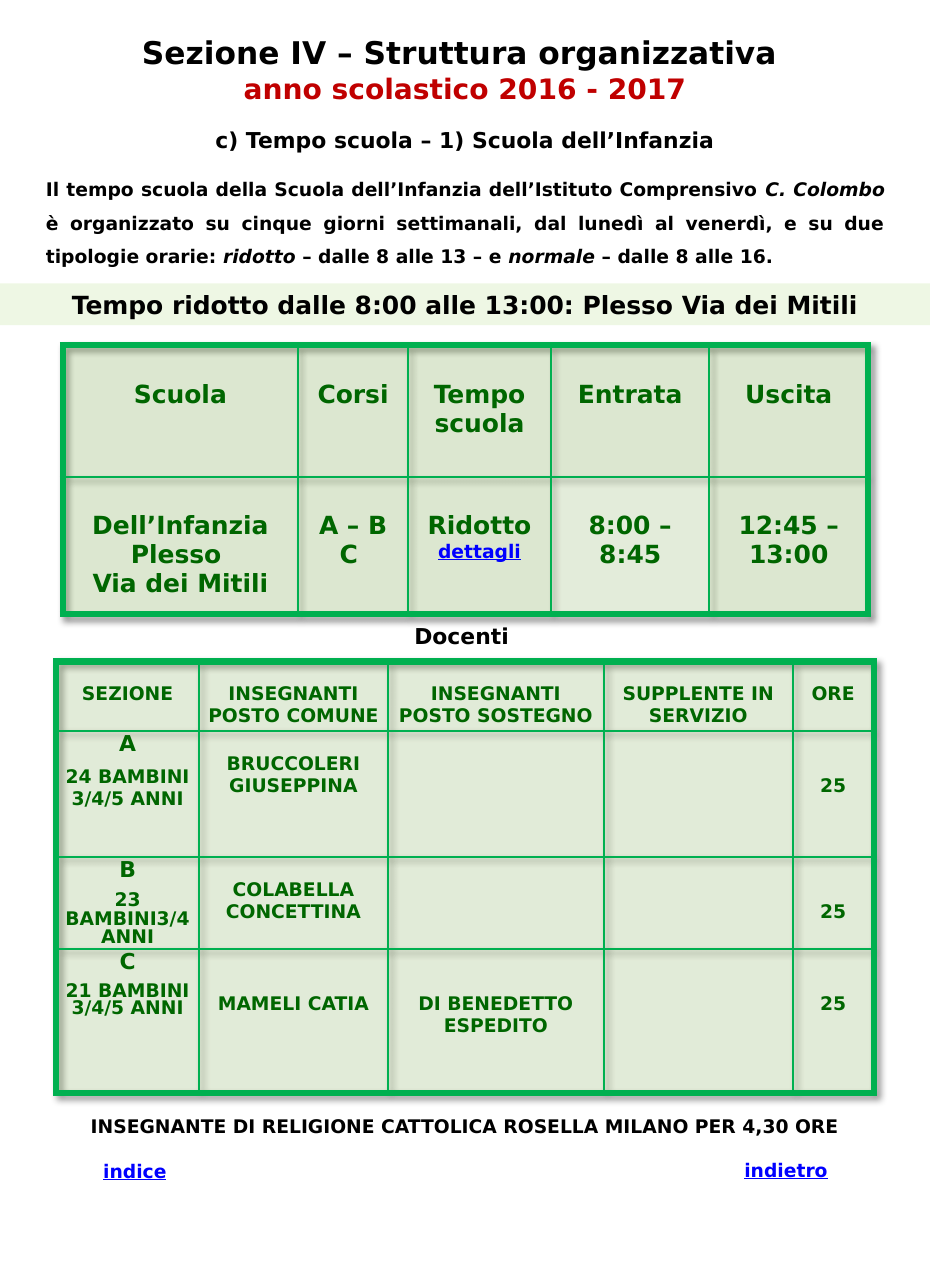
import pptx
import pptx.dml.color
import pptx.enum.shapes
import pptx.enum.text
import pptx.oxml
import pptx.oxml.ns
import pptx.util

FONT = "DejaVu Sans"
BLACK = pptx.dml.color.RGBColor(0x00, 0x00, 0x00)
RED = pptx.dml.color.RGBColor(0xC0, 0x00, 0x00)
BLUE = pptx.dml.color.RGBColor(0x00, 0x00, 0xFF)
DARK_GREEN = pptx.dml.color.RGBColor(0x00, 0x66, 0x00)
LINE_GREEN = pptx.dml.color.RGBColor(0x00, 0xB0, 0x50)
LIGHT_GREEN = pptx.dml.color.RGBColor(0x92, 0xD0, 0x50)
CENTER = pptx.enum.text.PP_ALIGN.CENTER
JUSTIFY = pptx.enum.text.PP_ALIGN.JUSTIFY
NAMESPACE = pptx.oxml.ns.nsdecls("a")
THIN, THICK = pptx.util.Pt(1.5), pptx.util.Pt(4.5)

presentation = pptx.Presentation()
presentation.slide_width = pptx.util.Inches(8.27)
presentation.slide_height = pptx.util.Inches(11.45)
COLUMN = presentation.slide_width // 827
ROW = presentation.slide_height // 1145
slide = presentation.slides.add_slide(presentation.slide_layouts[6])


def add_paragraph(frame, text, size, color=BLACK, before=0, spacing=None, align=CENTER):
    paragraph = frame.add_paragraph() if frame.text else frame.paragraphs[0]
    paragraph.alignment = align
    if before:
        paragraph.space_before = pptx.util.Pt(before)
    if spacing:
        paragraph.line_spacing = spacing
    for index, part in enumerate(text.split("|")):
        run = paragraph.add_run()
        run.text = part
        run.font.name = FONT
        run.font.size = pptx.util.Pt(size)
        run.font.bold = True
        run.font.italic = index % 2 == 1
        run.font.underline = color == BLUE
        run.font.color.rgb = color


def fill_translucent(fill, properties, percent):
    fill.solid()
    fill.fore_color.rgb = LIGHT_GREEN
    color = properties.find(pptx.oxml.ns.qn("a:solidFill"))[0]
    color.append(pptx.oxml.parse_xml(f'<a:alpha {NAMESPACE} val="{percent * 1000}"/>'))


introduction = (
    "Il tempo scuola della Scuola dell’Infanzia dell’Istituto Comprensivo |C. Colombo|"
    " è organizzato su cinque giorni settimanali, dal lunedì al venerdì, e su due"
    " tipologie orarie: |ridotto| – dalle 8 alle 13 – e |normale| – dalle 8 alle 16. "
)
text_boxes = [
    ((0, 25, 827, 118), [
        dict(text="Sezione IV – Struttura organizzativa ", size=20),
        dict(text="anno scolastico 2016 - 2017", size=18, color=RED),
        dict(text="c) Tempo scuola – 1) Scuola dell’Infanzia", size=14, before=14),
    ]),
    ((31, 143, 766, 101), [dict(text=introduction, size=12, spacing=1.5, align=JUSTIFY)]),
    ((38, 549, 745, 34), [dict(text="Docenti", size=14)]),
    ((0, 986, 827, 30), [
        dict(text="INSEGNANTE DI RELIGIONE CATTOLICA ROSELLA MILANO PER 4,30 ORE", size=12),
    ]),
    ((38, 1026, 164, 30), [dict(text="indice", size=12, color=BLUE)]),
    ((617, 1025, 164, 30), [dict(text="indietro", size=12, color=BLUE)]),
]
for (left, top, width, height), paragraphs in text_boxes:
    box = slide.shapes.add_textbox(left * COLUMN, top * ROW, width * COLUMN, height * ROW)
    box.text_frame.word_wrap = True
    for options in paragraphs:
        add_paragraph(box.text_frame, **options)

band = slide.shapes.add_shape(
    pptx.enum.shapes.MSO_SHAPE.RECTANGLE, 0, 252 * ROW, 827 * COLUMN, 37 * ROW
)
band.shadow.inherit = False
fill_translucent(band.fill, band._element.spPr, 15)
band.line.fill.background()
band.text_frame.word_wrap = True
add_paragraph(band.text_frame, "Tempo ridotto dalle 8:00 alle 13:00: Plesso Via dei Mitili", 16)

timetable = [
    [(1, ["Scuola"]), (1, ["Corsi"]), (1, ["Tempo scuola"]), (1, ["Entrata"]), (1, ["Uscita"])],
    [
        (1, ["Dell’Infanzia", "Plesso ", "Via dei Mitili"]),
        (1, ["A – B", "C "]),
        (1, ["Ridotto", dict(text="dettagli", size=12, color=BLUE)]),
        (1, ["8:00 – 8:45"]),
        (1, ["12:45 – 13:00"]),
    ],
]
teachers = [
    [
        (1, ["SEZIONE"]),
        (1, ["INSEGNANTI POSTO COMUNE"]),
        (1, ["INSEGNANTI POSTO SOSTEGNO"]),
        (1, ["SUPPLENTE IN SERVIZIO"]),
        (1, ["ORE"]),
    ],
]
sections = [
    ("A", "24 BAMBINI 3/4/5 ANNI", None, (1, ["BRUCCOLERI", "GIUSEPPINA"]), (0, [])),
    ("B", "23 BAMBINI3/4 ANNI", 12, (1, ["COLABELLA CONCETTINA"]), (0, [])),
    ("C", "21 BAMBINI 3/4/5 ANNI", 11, (2, ["MAMELI CATIA"]), (2, ["DI BENEDETTO ESPEDITO"])),
]
for letter, children, points, teacher, support in sections:
    spacing = pptx.util.Pt(points) if points else None
    section = [
        dict(text=letter, size=14, color=DARK_GREEN),
        dict(text=children, size=12, color=DARK_GREEN, before=6, spacing=spacing),
    ]
    teachers.append([(0, section), teacher, support, (0, []), (2, ["25"])])

tables = [
    (56, 307, [209, 98, 127, 141, 141], [117, 122], timetable, 16, 18, 10, 5, 26),
    (50, 588, [127, 168, 192, 168, 72], [62, 112, 82, 128], teachers, 12, 15, 7, 0, 19.4),
]
for left, top, widths, heights, content, size, opacity, side, edge, line_height in tables:
    table = slide.shapes.add_table(
        len(heights), len(widths), left * COLUMN, top * ROW,
        sum(widths) * COLUMN, sum(heights) * ROW,
    ).table
    table.first_row = False
    table.horz_banding = False
    table._tbl.tblPr.insert(0, pptx.oxml.parse_xml(
        f'<a:effectLst {NAMESPACE}><a:outerShdw blurRad="50800" dist="38100" dir="2700000">'
        '<a:srgbClr val="000000"><a:alpha val="40000"/></a:srgbClr></a:outerShdw></a:effectLst>'
    ))
    for index, width in enumerate(widths):
        table.columns[index].width = width * COLUMN
    for index, height in enumerate(heights):
        table.rows[index].height = height * ROW

    for row, cells in enumerate(content):
        for column, (skipped_lines, paragraphs) in enumerate(cells):
            cell = table.cell(row, column)
            cell.margin_left = cell.margin_right = side * COLUMN
            cell.margin_top = int((edge + skipped_lines * line_height) * ROW)
            cell.margin_bottom = edge * ROW
            for entry in paragraphs:
                if isinstance(entry, str):
                    entry = dict(text=entry, size=size, color=DARK_GREEN)
                add_paragraph(cell.text_frame, **entry)
            properties = cell._tc.get_or_add_tcPr()
            lighter = entry["text"] == "8:00 – 8:45" if paragraphs else False
            fill_translucent(cell.fill, properties, 14 if lighter else opacity)
            outer_sides = {
                "L": column == 0,
                "R": column == len(widths) - 1,
                "T": row == 0,
                "B": row == len(heights) - 1,
            }
            for position, (name, outer) in enumerate(outer_sides.items()):
                properties.insert(position, pptx.oxml.parse_xml(
                    f'<a:ln{name} {NAMESPACE} w="{THICK if outer else THIN}"><a:solidFill>'
                    f'<a:srgbClr val="{LINE_GREEN}"/></a:solidFill></a:ln{name}>'
                ))

presentation.save("out.pptx")
